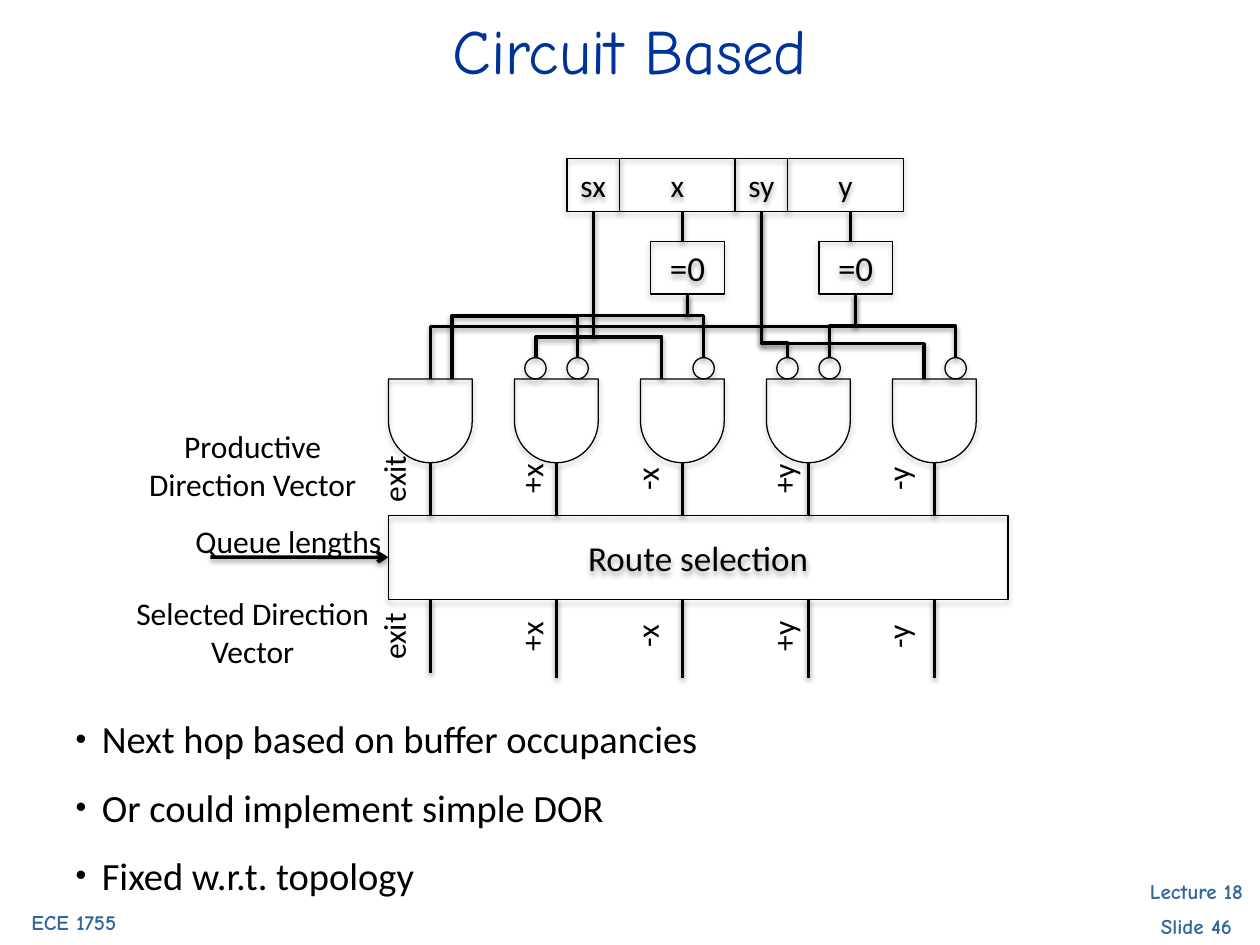
"""Build the slide on circuit-based routing with its gate diagram."""
from lxml import etree
from pptx import Presentation
from pptx.dml.color import RGBColor
from pptx.enum.shapes import MSO_CONNECTOR, MSO_SHAPE
from pptx.enum.text import MSO_ANCHOR, MSO_AUTO_SIZE, PP_ALIGN
from pptx.oxml.ns import qn
from pptx.util import Cm, Pt

RECT, DELAY, OVAL = MSO_SHAPE.RECTANGLE, MSO_SHAPE.FLOWCHART_DELAY, MSO_SHAPE.OVAL
STRAIGHT, ELBOW = MSO_CONNECTOR.STRAIGHT, MSO_CONNECTOR.ELBOW
TOP, MIDDLE = MSO_ANCHOR.TOP, MSO_ANCHOR.MIDDLE
LEFT, CENTER = PP_ALIGN.LEFT, PP_ALIGN.CENTER
NO_FIT = MSO_AUTO_SIZE.NONE


class Theme:
    ink = RGBColor(0x00, 0x00, 0x00)
    heading = RGBColor(0x00, 0x33, 0x99)
    footer = RGBColor(0x33, 0x66, 0x99)
    body_font, display_font = "Calibri", "Comic Neue"
    title_pt, list_pt, box_pt, label_pt, footer_pt = 36, 22, 20, 18, 12
    outline_pt, wire_pt = 0.75, 2


def write(s, *lines, size=Theme.label_pt, font=Theme.body_font, color=Theme.ink,
          bold=False, align=CENTER, anchor=TOP, before=0, spacing=None, margin=None):
    tf = s.text_frame
    tf.word_wrap = True
    tf.auto_size = NO_FIT
    tf.vertical_anchor = anchor
    if margin is not None:
        tf.margin_left = tf.margin_right = tf.margin_top = tf.margin_bottom = margin
    for i, line in enumerate(lines):
        p = tf.add_paragraph() if i else tf.paragraphs[0]
        p.alignment = align
        p.space_before = Pt(before)
        if spacing:
            p.line_spacing = Pt(spacing)
        r = p.add_run()
        r.text = line
        r.font.name, r.font.size, r.font.bold = font, Pt(size), bold
        r.font.color.rgb = color


def outline(s, width, opacity, dist):
    s.line.color.rgb = Theme.ink
    s.line.width = Pt(width)
    effects = etree.SubElement(s._element.spPr, qn("a:effectLst"))
    shadow = etree.SubElement(effects, qn("a:outerShdw"), blurRad=str(Pt(3.1)),
                              dist=str(Pt(dist)), dir="5400000", rotWithShape="0")
    shade = etree.SubElement(shadow, qn("a:srgbClr"), val=str(Theme.ink))
    etree.SubElement(shade, qn("a:alpha"), val=str(opacity * 1000))


prs = Presentation()
prs.slide_width, prs.slide_height = Cm(25.4), Cm(19.05)
slide = prs.slides.add_slide(prs.slide_layouts[1])
shapes = slide.shapes

title, body = shapes.title, slide.placeholders[1]
title.left, title.top, title.width, title.height = Cm(1.27), Cm(0.1), Cm(22.86), Cm(3.18)
write(title, "Circuit Based", size=Theme.title_pt, font=Theme.display_font, color=Theme.heading)

body.left, body.top, body.width, body.height = Cm(1.27), Cm(14.38), Cm(22.86), Cm(3.4)
write(body, "Next hop based on buffer occupancies", "Or could implement simple DOR",
      "Fixed w.r.t. topology", size=Theme.list_pt, align=LEFT, before=15, spacing=24)
for p in body.text_frame.paragraphs:
    pPr = p._p.get_or_add_pPr()
    pPr.set("marL", str(Cm(0.53)))
    pPr.set("indent", str(-Cm(0.53)))
    etree.SubElement(pPr, qn("a:buSzPct"), val="80000")
    etree.SubElement(pPr, qn("a:buChar"), char="•")

for x, y, h, lines in [(22.43, 17.58, 1.55, ("Lecture 18", "Slide 46")),
                       (-0.2, 18.21, 0.76, ("ECE 1755",))]:
    sp = shapes.add_textbox(Cm(x), Cm(y), Cm(3.38), Cm(h))
    write(sp, *lines, size=Theme.footer_pt, font=Theme.display_font, color=Theme.footer,
          bold=True, before=6)

gate_x, pitch = 7.83, 2.54
boxes = []
wires = []
for i, axis in enumerate(("x", "y")):
    x = 11.43 + 3.39 * i
    boxes += [(RECT, x, 3.2, 1.06, 1.06, "s" + axis, Theme.label_pt),
              (RECT, x + 1.06, 3.2, 2.33, 1.06, axis, Theme.label_pt),
              (RECT, x + 1.69, 4.87, 1.48, 1.06, "=0", Theme.box_pt)]
    wires.append((x + 2.33, 4.26, x + 2.33, 4.87))
for i, bubbles in enumerate([(), (0.21, 1.06), (1.06,), (0.21, 1.06), (1.06,)]):
    x = gate_x + pitch * i
    boxes.append((DELAY, x, 7.64, 1.69, 1.69, "", 0))
    boxes += [(OVAL, x + dx, 7.21, 0.43, 0.43, "", 0) for dx in bubbles]
    wires += [(x + 0.85, 9.33, x + 0.85, 10.39),
              (x + 0.85, 12.08, x + 0.85, 13.66 if i else 13.56)]
boxes.append((RECT, gate_x, 10.39, 12.49, 1.69, "Route selection", Theme.box_pt))

for kind, x, y, w, h, text, size in boxes:
    s = shapes.add_shape(kind, Cm(x), Cm(y), Cm(w), Cm(h))
    s.fill.background()
    outline(s, Theme.outline_pt, 35, 1.8)
    if kind == DELAY:
        s.rotation = 90
    if text:
        write(s, text, size=size, anchor=MIDDLE, margin=0)
route = s

for x1, y1, x2, y2 in wires:
    c = shapes.add_connector(STRAIGHT, Cm(x1), Cm(y1), Cm(x2), Cm(y2))
    outline(c, Theme.wire_pt, 38, 1.6)

bends = [(11.96, 4.26, 10.8, 7.21, 0.86, True), (11.96, 6.79, 13.34, 7.64, 1, False),
         (13.86, 5.94, 14.18, 7.21, 0.33, True), (13.86, 5.94, 11.64, 7.21, 0.33, True),
         (11.64, 6.37, 9.11, 7.64, 1, False), (17.25, 5.94, 16.72, 7.21, 0.5, True),
         (17.25, 5.94, 19.26, 7.21, 0.5, True), (16.72, 6.58, 8.68, 7.64, 1, False),
         (15.35, 4.26, 15.88, 7.21, 0.9, True), (15.35, 4.26, 18.63, 7.64, 0.79, True)]
for x1, y1, x2, y2, bend, vertical_first in bends:
    c = shapes.add_connector(ELBOW, Cm(x1), Cm(y1), Cm(x2), Cm(y2))
    spPr = c._element.spPr
    guides = spPr.find(qn("a:prstGeom")).get_or_add_avLst()
    etree.SubElement(guides, qn("a:gd"), name="adj1", fmla=f"val {round(bend * 100000)}")
    if vertical_first:
        w, h = abs(x2 - x1), y2 - y1
        c.left, c.top = Cm((x1 + x2 - h) / 2), Cm((y1 + y2 - w) / 2)
        c.width, c.height = Cm(h), Cm(w)
        xfrm = spPr.find(qn("a:xfrm"))
        xfrm.set("rot", "16200000" if x2 > x1 else "5400000")
        xfrm.set("flipH", "1" if x2 > x1 else "0")
    outline(c, Theme.wire_pt, 38, 1.6)

c = shapes.add_connector(STRAIGHT, Cm(4.24), Cm(11.23), Cm(gate_x), Cm(11.23))
c.end_connect(route, 1)
outline(c, Theme.wire_pt, 38, 1.6)
etree.SubElement(c.line._get_or_add_ln(), qn("a:tailEnd"), type="arrow")

for x, y, w, h, text in [(2.34, 8.48, 5.51, 1.8, "Productive Direction Vector"),
                         (2.54, 10.39, 6.55, 1.02, "Queue lengths"),
                         (2.34, 11.86, 5.51, 1.8, "Selected Direction Vector")]:
    write(shapes.add_textbox(Cm(x), Cm(y), Cm(w), Cm(h)), text)

for y in (9.14, 12.32):
    for x, text in [(7.19, "exit"), (9.96, "+x"), (12.29, "-x"), (15.04, "+y"), (17.35, "-y")]:
        s = shapes.add_textbox(Cm(x), Cm(y), Cm(1.48), Cm(1.02))
        s.rotation = 270
        write(s, text, anchor=MIDDLE, margin=0)

prs.save("out.pptx")
